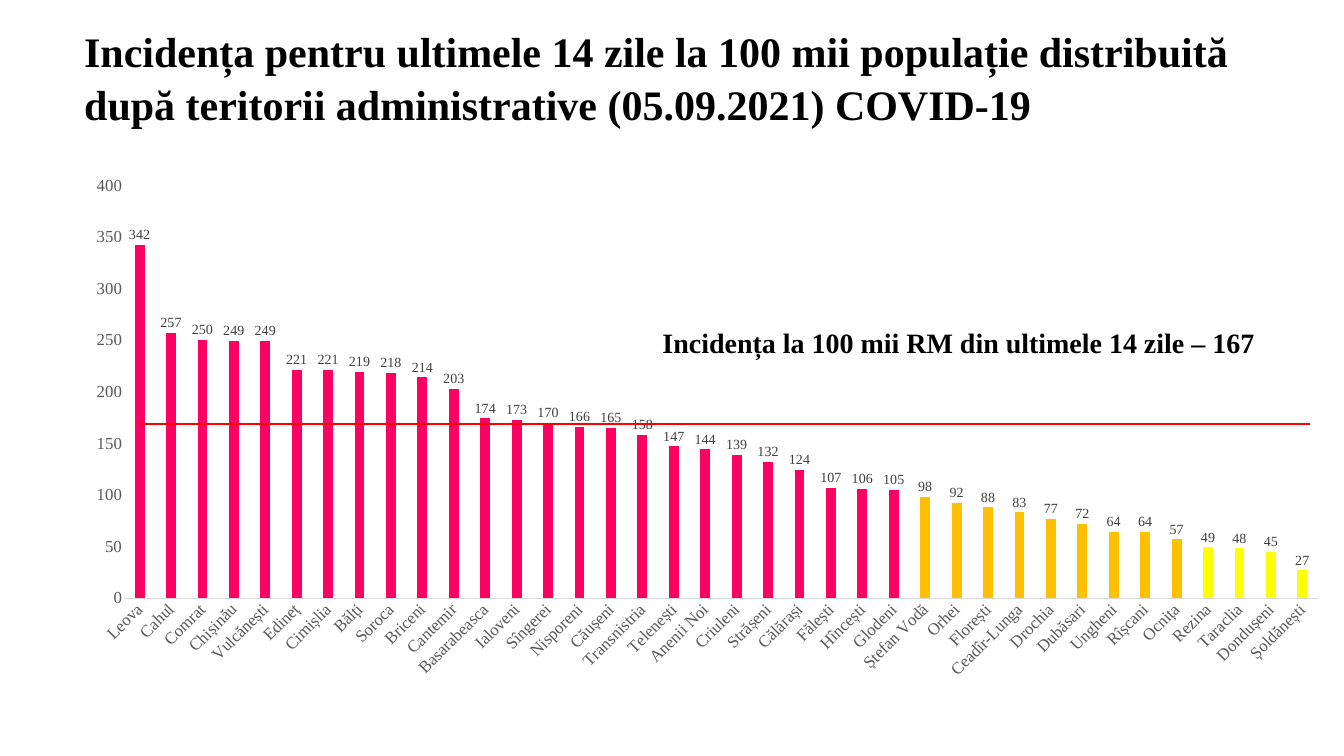
from lxml import etree
from pptx import Presentation
from pptx.chart.data import CategoryChartData
from pptx.dml.color import RGBColor
from pptx.enum.chart import XL_CHART_TYPE as ChartType, XL_LABEL_POSITION as LabelPosition
from pptx.enum.chart import XL_TICK_MARK as TickMark
from pptx.enum.shapes import MSO_CONNECTOR as Connector
from pptx.enum.text import MSO_ANCHOR as Anchor, MSO_AUTO_SIZE as AutoSize, PP_ALIGN as Align
from pptx.oxml import parse_xml
from pptx.oxml.ns import nsdecls, qn
from pptx.util import Pt

PX = 9144  # EMU per px, 100 px to the inch
RED, ORANGE, YELLOW = "FE0061", "FFC000", "FFFF00"

INCIDENCE = {
    "Leova": 342, "Cahul": 257, "Comrat": 250, "Chișinău": 249, "Vulcănești": 249,
    "Edineț": 221, "Cimișlia": 221, "Bălți": 219, "Soroca": 218, "Briceni": 214,
    "Cantemir": 203, "Basarabeasca": 174, "Ialoveni": 173, "Sîngerei": 170,
    "Nisporeni": 166, "Căușeni": 165, "Transnistria": 158, "Telenești": 147,
    "Anenii Noi": 144, "Criuleni": 139, "Strășeni": 132, "Călărași": 124,
    "Fălești": 107, "Hîncești": 106, "Glodeni": 105, "Ștefan Vodă": 98,
    "Orhei": 92, "Florești": 88, "Ceadîr-Lunga": 83, "Drochia": 77,
    "Dubăsari": 72, "Ungheni": 64, "Rîșcani": 64, "Ocnița": 57, "Rezina": 49,
    "Taraclia": 48, "Dondușeni": 45, "Șoldănești": 27,
}


def color(value):
    return RGBColor.from_string(value)


def style_font(font, size, value, bold=False):
    font.name = "Times New Roman"
    font.size = Pt(size)
    font.bold = bold
    font.color.rgb = color(value)


presentation = Presentation()
presentation.slide_width, presentation.slide_height = 2667 * PX, 1500 * PX
slide = presentation.slides.add_slide(presentation.slide_layouts[5])

# Chart
chart_data = CategoryChartData(number_format="0")
chart_data.categories = list(INCIDENCE)
chart_data.add_series("Series 1", list(INCIDENCE.values()))
chart = slide.shapes.add_chart(
    ChartType.COLUMN_CLUSTERED, 20 * PX, 335 * PX, 2596 * PX, 1165 * PX, chart_data
).chart
chart.has_legend = False
chart.has_title = False
style_font(chart.font, 24, "000000")

plot_area = chart._chartSpace.chart.plotArea
for layout in plot_area.findall(qn("c:layout")):
    plot_area.remove(layout)
plot_area.insert(0, parse_xml(
    f'<c:layout {nsdecls("c")}><c:manualLayout><c:layoutTarget val="inner"/>'
    '<c:xMode val="edge"/><c:yMode val="edge"/><c:x val="0.087"/><c:y val="0.028"/>'
    '<c:w val="0.913"/><c:h val="0.703"/></c:manualLayout></c:layout>'
))

for axis in (chart.category_axis, chart.value_axis):
    axis.major_tick_mark = axis.minor_tick_mark = TickMark.NONE
    axis.has_major_gridlines = False
    style_font(axis.tick_labels.font, 24, "595959")

category_axis = chart.category_axis
category_axis.format.line.color.rgb = color("D9D9D9")
category_axis.format.line.width = Pt(0.75)
category_axis._element.find(qn("c:txPr")).find(qn("a:bodyPr")).set("rot", "-2700000")

value_axis = chart.value_axis
value_axis.minimum_scale, value_axis.maximum_scale, value_axis.major_unit = 0, 400, 50
value_axis.format.line.fill.background()
value_axis.tick_labels.number_format = "0"
value_axis.tick_labels.number_format_is_linked = False

plot = chart.plots[0]
plot.gap_width, plot.overlap = 219, -27
plot.vary_by_categories = False
series = plot.series[0]
series.invert_if_negative = False
series.format.fill.solid()
series.format.fill.fore_color.rgb = color(RED)
for index, value in enumerate(INCIDENCE.values()):
    if value < 100:
        fill = series.points[index].format.fill
        fill.solid()
        fill.fore_color.rgb = color(ORANGE if value >= 50 else YELLOW)

labels = series.data_labels
labels.show_value = True
labels.position = LabelPosition.OUTSIDE_END
labels.number_format = "0"
labels.number_format_is_linked = False
style_font(labels.font, 20, "404040")

# Title
title = slide.shapes.title
title.left, title.top, title.width, title.height = 157 * PX, 39 * PX, 2416 * PX, 229 * PX
title_frame = title.text_frame
title_frame.text = (
    "Incidența pentru ultimele 14 zile la 100 mii populație distribuită "
    "după teritorii administrative (05.09.2021) COVID-19"
)
title_frame.word_wrap = True
title_frame.auto_size = AutoSize.NONE
title_frame.vertical_anchor = Anchor.TOP
paragraph = title_frame.paragraphs[0]
paragraph.alignment = Align.LEFT
paragraph.line_spacing = 1.06
style_font(paragraph.runs[0].font, 60, "000000", bold=True)

# National average
average_line = slide.shapes.add_connector(
    Connector.STRAIGHT, 280 * PX, 842 * PX, 2600 * PX, 842 * PX
)
average_line.line.color.rgb = color("FF0000")
average_line.line.width = Pt(3)
etree.SubElement(average_line._element.spPr, qn("a:effectLst"))

average_label = slide.shapes.add_textbox(1298 * PX, 640 * PX, 1208 * PX, 77 * PX)
label_frame = average_label.text_frame
label_frame.text = "Incidența la 100 mii RM din ultimele 14 zile – 167"
label_frame.word_wrap = False
label_frame.auto_size = AutoSize.SHAPE_TO_FIT_TEXT
paragraph = label_frame.paragraphs[0]
paragraph.alignment = Align.CENTER
style_font(paragraph.runs[0].font, 40, "000000", bold=True)

presentation.save("out.pptx")
